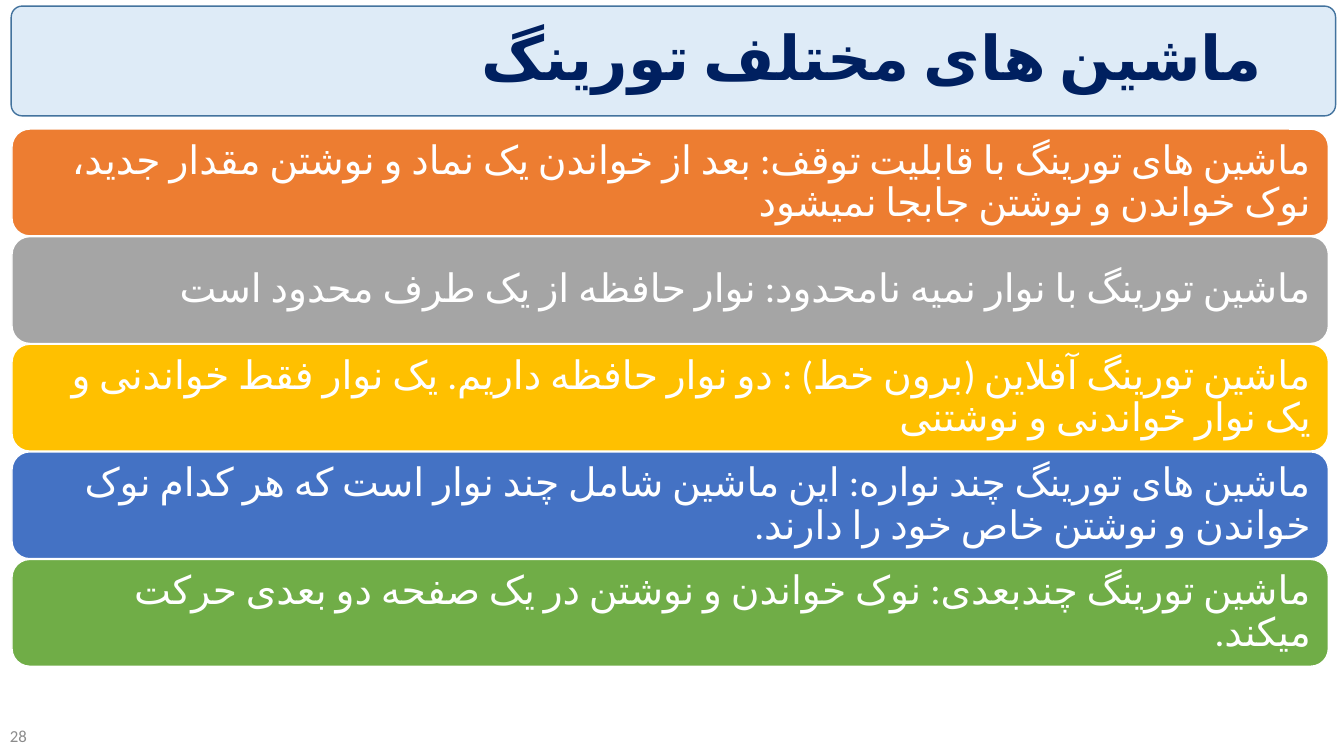
"""Build the slide listing the variants of the Turing machine."""
from lxml import etree
from pptx import Presentation
from pptx.dml.color import RGBColor
from pptx.enum.shapes import MSO_SHAPE as Shape
from pptx.enum.text import MSO_ANCHOR as Anchor, PP_ALIGN as Align
from pptx.oxml.ns import qn
from pptx.util import Pt

FONT = "Calibri"
WHITE = RGBColor(0xFF, 0xFF, 0xFF)
NAVY = RGBColor(0x00, 0x20, 0x60)
GRAY = RGBColor(0x8C, 0x8C, 0x8C)
PALE_BLUE = RGBColor(0xDE, 0xEB, 0xF7)
STEEL_BLUE = RGBColor(0x43, 0x73, 0x9E)
ORANGE = RGBColor(0xED, 0x7D, 0x31)
SILVER = RGBColor(0xA5, 0xA5, 0xA5)
GOLD = RGBColor(0xFF, 0xC0, 0x00)
BLUE = RGBColor(0x44, 0x72, 0xC4)
GREEN = RGBColor(0x70, 0xAD, 0x47)

MACHINES = [
    (ORANGE, "ماشین های تورینگ با قابلیت توقف: بعد از خواندن یک نماد و نوشتن مقدار جدید، نوک خواندن و نوشتن جابجا نمیشود"),
    (SILVER, "ماشین تورینگ با نوار نمیه نامحدود: نوار حافظه از یک طرف محدود است"),
    (GOLD, "ماشین تورینگ آفلاین (برون خط) : دو نوار حافظه داریم. یک نوار فقط خواندنی و یک نوار خواندنی و نوشتنی"),
    (BLUE, "ماشین های تورینگ چند نواره: این ماشین شامل چند نوار است که هر کدام نوک خواندن و نوشتن خاص خود را دارند."),
    (GREEN, "ماشین تورینگ چندبعدی: نوک خواندن و نوشتن در یک صفحه دو بعدی حرکت میکند."),
]
BAR_TOP, BAR_PITCH, BAR_HEIGHT = 92.2, 76.86, 76.3


def add_panel(left, top, width, height, fill, line):
    shape = slide.shapes.add_shape(Shape.ROUNDED_RECTANGLE, Pt(left), Pt(top), Pt(width), Pt(height))
    shape.shadow.inherit = False
    shape.fill.solid()
    shape.fill.fore_color.rgb = fill
    shape.line.color.rgb = line
    shape.line.width = Pt(1)
    return shape


def write_text(shape, text, size, color, bold=False, persian=True):
    frame = shape.text_frame
    frame.word_wrap = True
    frame.vertical_anchor = Anchor.MIDDLE
    paragraph = frame.paragraphs[0]
    run = paragraph.add_run()
    run.text = text
    for name, value in {"name": FONT, "size": Pt(size), "bold": bold}.items():
        setattr(run.font, name, value)
    run.font.color.rgb = color
    if persian:
        paragraph.alignment = Align.RIGHT
        paragraph.line_spacing = 0.9
        paragraph._p.get_or_add_pPr().set("rtl", "1")
        properties = run._r.get_or_add_rPr()
        properties.set("lang", "fa-IR")
        etree.SubElement(properties, qn("a:cs")).set("typeface", FONT)
    return frame


presentation = Presentation()
presentation.slide_width, presentation.slide_height = Pt(960), Pt(540)
slide = presentation.slides.add_slide(presentation.slide_layouts[6])

header = add_panel(8, 4.4, 946, 78.4, PALE_BLUE, STEEL_BLUE)
header.adjustments[0] = 0.1

title = slide.shapes.add_textbox(Pt(17.3), Pt(10.8), Pt(892), Pt(64.8))
write_text(title, "ماشین های مختلف تورینگ", 44, NAVY, bold=True)

page_number = slide.shapes.add_textbox(Pt(0), Pt(511.2), Pt(51), Pt(28.8))
write_text(page_number, "28", 12, GRAY, persian=False)

for index, (color, description) in enumerate(MACHINES):
    bar = add_panel(8.6, BAR_TOP + index * BAR_PITCH, 940.3, BAR_HEIGHT, color, WHITE)
    frame = write_text(bar, description, 28, WHITE)
    frame.paragraphs[0].space_after = Pt(9.8)
    for side in ("left", "top", "right", "bottom"):
        setattr(frame, f"margin_{side}", Pt(8.64))

presentation.save("out.pptx")
